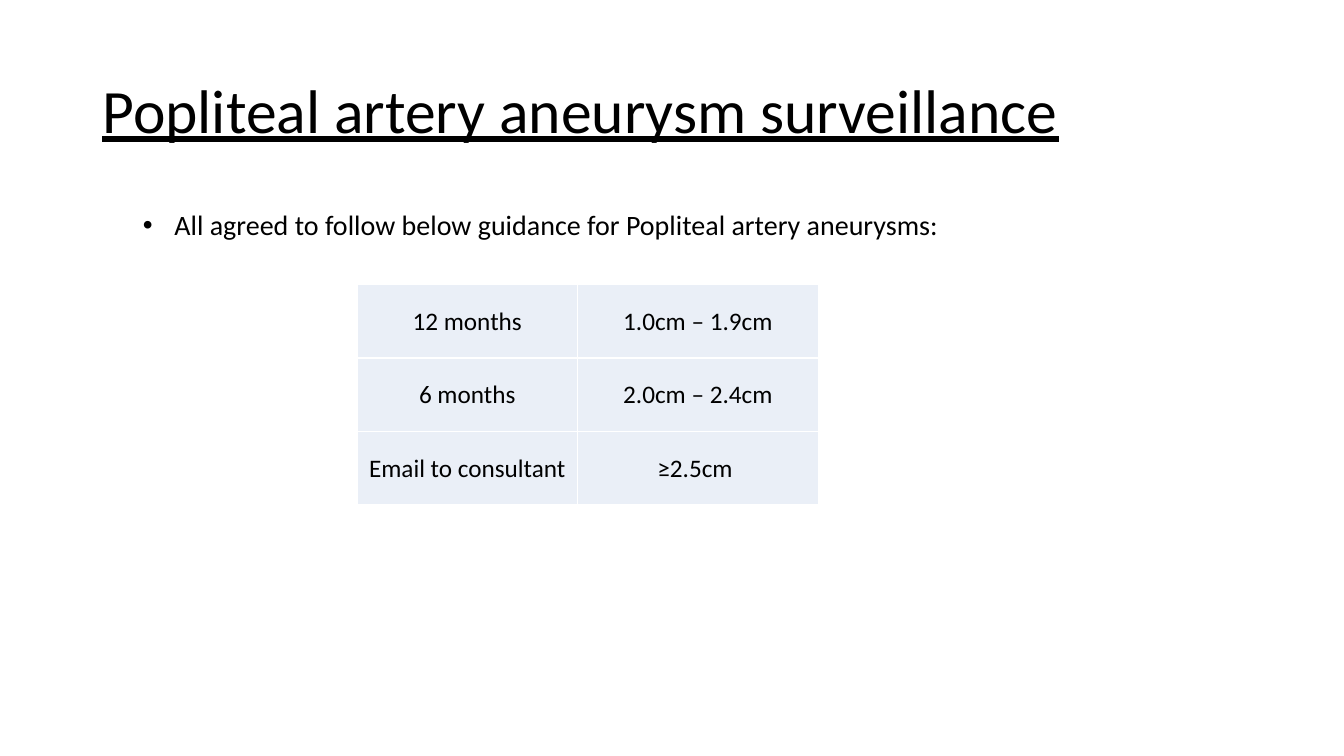
from lxml import etree
from pptx import Presentation
from pptx.dml.color import RGBColor
from pptx.enum.text import MSO_ANCHOR, MSO_AUTO_SIZE, PP_ALIGN
from pptx.oxml.ns import qn
from pptx.util import Pt

MIDDLE = MSO_ANCHOR.MIDDLE
LEFT, CENTER = PP_ALIGN.LEFT, PP_ALIGN.CENTER
NO_FIT, GROW = MSO_AUTO_SIZE.NONE, MSO_AUTO_SIZE.SHAPE_TO_FIT_TEXT
TITLE_ONLY = 5


def rgb(value):
    """Turn a hex string into a colour."""
    return RGBColor.from_string(value)


class Deck:
    """Hold the style and the current slide, and draw its elements."""

    font, ink, band, rule = "Calibri", "000000", "EAEFF7", "FFFFFF"

    def __init__(self, width, height):
        """Start a presentation with one title-only slide."""
        self.prs = Presentation()
        self.prs.slide_width, self.prs.slide_height = Pt(width), Pt(height)
        self.s = self.prs.slides.add_slide(self.prs.slide_layouts[TITLE_ONLY])

    def paragraph(self, tf, text, size, align=LEFT):
        """Put one styled paragraph into a text frame."""
        p = tf.paragraphs[0]
        p.text, p.alignment = text, align
        p.font.name, p.font.size = self.font, Pt(size)
        p.font.color.rgb = rgb(self.ink)
        return p

    def title(self, text, x, y, w, h, size):
        """Place the underlined slide title."""
        sp = self.s.shapes.title
        sp.left, sp.top, sp.width, sp.height = Pt(x), Pt(y), Pt(w), Pt(h)
        tf = sp.text_frame
        tf.auto_size, tf.vertical_anchor = NO_FIT, MIDDLE
        p = self.paragraph(tf, text, size)
        p.line_spacing = 0.9
        p.font.underline = True

    def bullet(self, text, x, y, w, h, size, indent):
        """Add a one-line bulleted text box."""
        tf = self.s.shapes.add_textbox(Pt(x), Pt(y), Pt(w), Pt(h)).text_frame
        tf.word_wrap, tf.auto_size = False, GROW
        pPr = self.paragraph(tf, text, size)._p.get_or_add_pPr()
        pPr.set("marL", str(Pt(indent)))
        pPr.set("indent", str(-Pt(indent)))
        bullet = etree.Element(qn("a:buChar"), char="•")
        pPr.insert(0, bullet)
        bullet.addprevious(etree.Element(qn("a:buFont"), typeface="Arial"))

    def borders(self, cell, width):
        """Rule all four sides of a cell."""
        tcPr = cell._tc.get_or_add_tcPr()
        for side in "LRTB":
            ln = etree.SubElement(tcPr, qn(f"a:ln{side}"), w=str(Pt(width)))
            fill = etree.SubElement(ln, qn("a:solidFill"))
            etree.SubElement(fill, qn("a:srgbClr"), val=self.rule)

    def table(self, rows, x, y, widths, row_height, size):
        """Add a plain table of centred cells."""
        table = self.s.shapes.add_table(
            len(rows), len(widths), Pt(x), Pt(y),
            Pt(sum(widths)), Pt(row_height * len(rows))).table
        table.first_row = table.horz_banding = False
        for column, width in zip(table.columns, widths):
            column.width = Pt(width)
        for row, texts in zip(table.rows, rows):
            row.height = Pt(row_height)
            for cell, text in zip(row.cells, texts):
                cell.margin_left = cell.margin_right = cell.margin_top = Pt(0.75)
                cell.margin_bottom = 0
                cell.vertical_anchor = MIDDLE
                self.borders(cell, 1)
                cell.fill.solid()
                cell.fill.fore_color.rgb = rgb(self.band)
                self.paragraph(cell.text_frame, text, size, CENTER)


def main():
    """Build and save the slide."""
    deck = Deck(960, 540)
    deck.title("Popliteal artery aneurysm surveillance", 66, 28.75, 828, 104.4, 44)
    deck.table([("12 months", "1.0cm – 1.9cm"),
                ("6 months", "2.0cm – 2.4cm"),
                ("Email to consultant", "≥2.5cm ")],
               255, 203.25, (157.5, 172), 52.5, 18)
    deck.bullet("All agreed to follow below guidance for Popliteal artery aneurysms:",
                95, 144.75, 588, 31.5, 20, 22.5)
    deck.prs.save("out.pptx")


if __name__ == "__main__":
    main()
